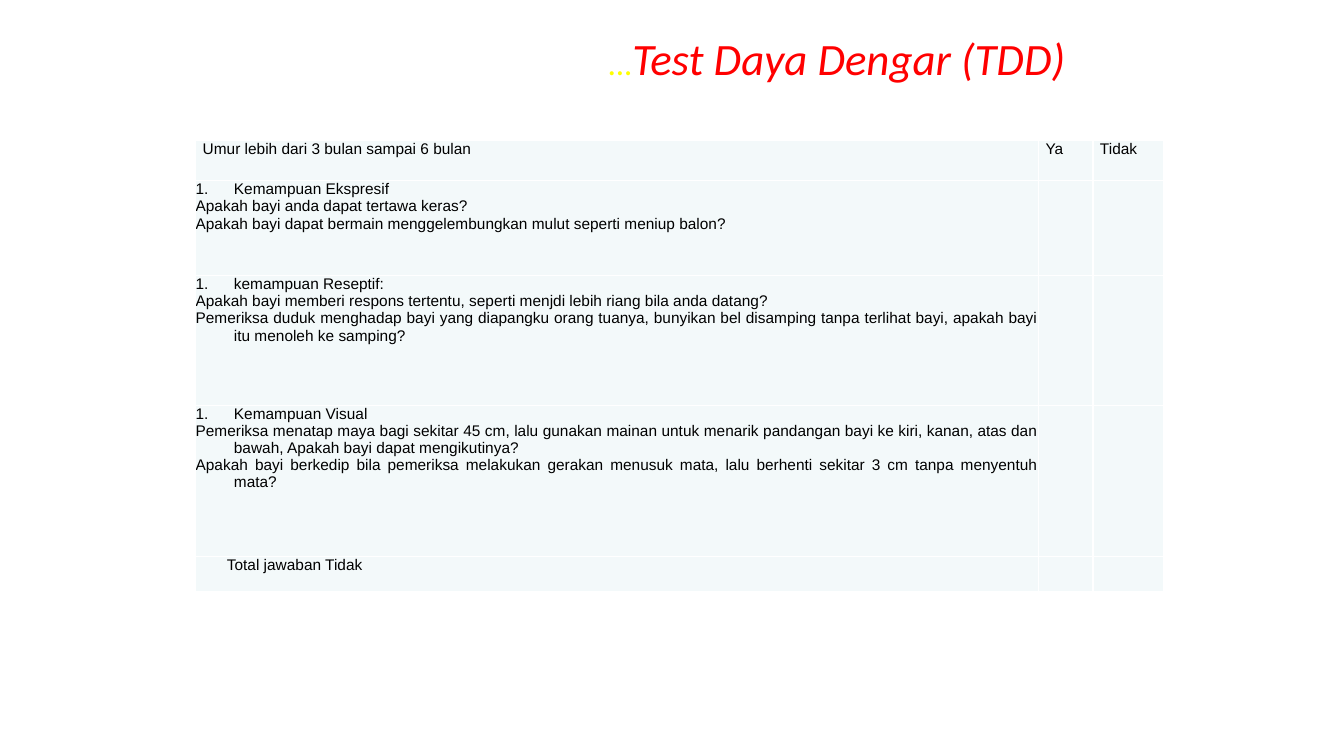
from dataclasses import dataclass

from lxml import etree
from pptx import Presentation
from pptx import util as u
from pptx.dml.color import RGBColor
from pptx.enum import text
from pptx.oxml import ns

EMU_PER_PX = 9144


@dataclass(frozen=True)
class Theme:
    heading_font: str = "Calibri"
    body_font: str = "Arial"
    heading: str = "FF0000"
    ellipsis: str = "FFFF00"
    ink: str = "000000"
    cell: str = "F3F9FA"
    border: str = "FFFFFF"
    heading_size: int = 32
    ellipsis_size: int = 24
    body_size: int = 11
    border_width: int = 1


@dataclass(frozen=True)
class Line:
    words: str
    left: int = 38
    hanging: int = -38
    justified: bool = True
    numbered: bool = False
    before: float = 0


@dataclass(frozen=True)
class Row:
    height: int
    cells: tuple[tuple[Line, ...], ...]


THEME = Theme()
COLUMN_WIDTHS = (836, 54, 70)


def px(length: int) -> u.Emu:
    return u.Emu(length * EMU_PER_PX)


def label(words: str) -> tuple[Line, ...]:
    return (Line(words, left=7, hanging=0, justified=False),)


def question_row(height: int, before: float, ability: str, *questions: str) -> Row:
    heading = Line(ability, numbered=True, before=before)
    return Row(height, ((heading, *(Line(words, before=before) for words in questions)),))


ROWS = (
    Row(40, (label("Umur lebih dari 3 bulan sampai 6 bulan"), label("Ya"), label("Tidak"))),
    question_row(
        94, 0.2, "Kemampuan Ekspresif",
        "Apakah bayi anda dapat tertawa keras?",
        "Apakah bayi dapat bermain menggelembungkan mulut seperti meniup balon?",
    ),
    question_row(
        129, 0.2, "kemampuan Reseptif:",
        "Apakah bayi memberi respons tertentu, seperti menjdi lebih riang bila anda datang?",
        "Pemeriksa duduk menghadap bayi yang diapangku orang tuanya, bunyikan bel disamping "
        "tanpa terlihat bayi, apakah bayi itu menoleh ke samping?",
    ),
    question_row(
        150, 0, "Kemampuan Visual",
        "Pemeriksa menatap maya bagi sekitar 45 cm, lalu gunakan mainan untuk menarik pandangan "
        "bayi ke kiri, kanan, atas dan bawah, Apakah bayi dapat mengikutinya?",
        "Apakah bayi berkedip bila pemeriksa melakukan gerakan menusuk mata, lalu berhenti "
        "sekitar 3 cm tanpa menyentuh mata?",
    ),
    Row(35, ((Line("Total jawaban Tidak", left=31, hanging=0),),)),
)


def style_font(font, name: str, size: int, color: str, italic: bool = False) -> None:
    font.name = name
    font.size = u.Pt(size)
    font.color.rgb = RGBColor.from_string(color)
    font.italic = italic


def add_title(page) -> None:
    box = page.shapes.add_textbox(px(167), px(30), px(900), px(61))
    frame = box.text_frame
    frame.word_wrap = True
    frame.vertical_anchor = text.MSO_ANCHOR.MIDDLE
    para = frame.paragraphs[0]
    para.alignment = text.PP_ALIGN.RIGHT
    para.line_spacing = 0.9
    for words, size, color in (
        ("…", THEME.ellipsis_size, THEME.ellipsis),
        ("Test Daya Dengar (TDD)", THEME.heading_size, THEME.heading),
    ):
        span = para.add_run()
        span.text = words
        style_font(span.font, THEME.heading_font, size, color, italic=True)


def write_line(para, line: Line) -> None:
    para.text = line.words
    para.alignment = text.PP_ALIGN.JUSTIFY if line.justified else text.PP_ALIGN.LEFT
    para.space_before = u.Pt(line.before)
    properties = para._p.get_or_add_pPr()
    properties.set("marL", str(px(line.left)))
    properties.set("indent", str(px(line.hanging)))
    if line.numbered:
        etree.SubElement(properties, ns.qn("a:buFont"), typeface="+mj-lt")
        etree.SubElement(properties, ns.qn("a:buAutoNum"), type="arabicPeriod")
    else:
        etree.SubElement(properties, ns.qn("a:buNone"))
    for span in para.runs:
        style_font(span.font, THEME.body_font, THEME.body_size, THEME.ink)


def style_cell(cell) -> None:
    cell.margin_left = cell.margin_right = cell.margin_top = cell.margin_bottom = 0
    properties = cell._tc.get_or_add_tcPr()
    for side in ("a:lnL", "a:lnR", "a:lnT", "a:lnB"):
        edge = etree.SubElement(properties, ns.qn(side), w=str(u.Pt(THEME.border_width)))
        paint = etree.SubElement(edge, ns.qn("a:solidFill"))
        etree.SubElement(paint, ns.qn("a:srgbClr"), val=THEME.border)
    cell.fill.solid()
    cell.fill.fore_color.rgb = RGBColor.from_string(THEME.cell)


def add_checklist(page) -> None:
    width, height = sum(COLUMN_WIDTHS), sum(row.height for row in ROWS)
    frame = page.shapes.add_table(
        len(ROWS), len(COLUMN_WIDTHS), px(194), px(139), px(width), px(height)
    )
    table = frame.table
    for column, column_width in zip(table.columns, COLUMN_WIDTHS):
        column.width = px(column_width)
    for table_row, row in zip(table.rows, ROWS):
        table_row.height = px(row.height)
        for cell in table_row.cells:
            style_cell(cell)
        for cell, lines in zip(table_row.cells, row.cells):
            cell.text_frame.text = "\n".join(line.words for line in lines)
            for para, line in zip(cell.text_frame.paragraphs, lines):
                write_line(para, line)


def main() -> None:
    deck = Presentation()
    deck.slide_width, deck.slide_height = px(1333), px(750)
    page = deck.slides.add_slide(deck.slide_layouts[6])
    add_title(page)
    add_checklist(page)
    deck.save("out.pptx")


if __name__ == "__main__":
    main()
